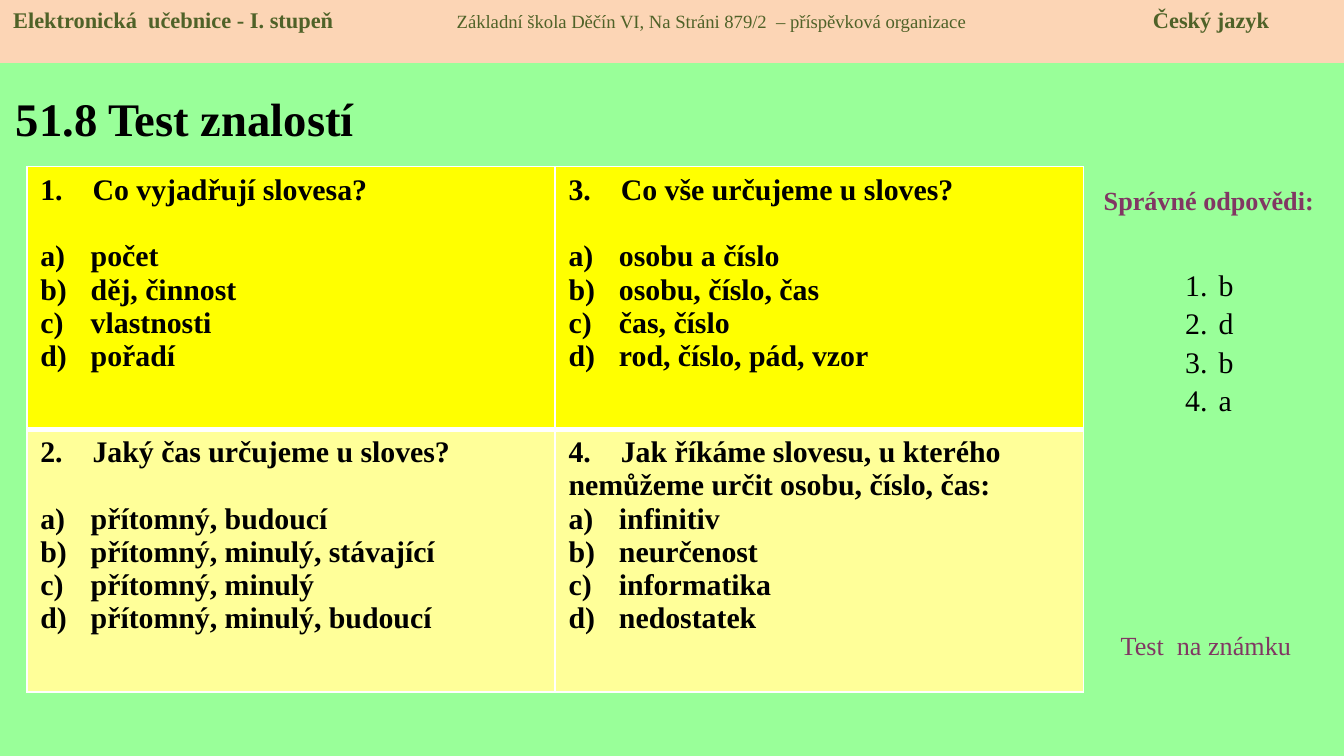
from lxml.etree import SubElement as Sub
from pptx import Presentation
from pptx.dml.color import RGBColor as RGB
from pptx.enum.shapes import MSO_SHAPE as Shape
from pptx.enum.text import MSO_ANCHOR as Anchor, PP_ALIGN as Align
from pptx.oxml import parse_xml as to_xml
from pptx.oxml.ns import nsdecls, qn
from pptx.util import Pt

HEX = {
    "back": "99FF99", "band": "FCD5B5", "olive": "4F6228", "plum": "813763",
    "ink": "000000", "line": "FFFFFF", "top": "FFFF00", "low": "FFFF99",
}
FACE = "Times New Roman"

HEAD = [
    ("Elektronická  učebnice - I. stupeň", 12, True),
    ("\tZákladní škola Děčín VI, Na Stráni 879/2  – příspěvková organizace", 10, False),
    ("\tČeský jazyk", 12, True),
]
HEAD_TABS = [237.6, 610.6]

LABELS = [
    ("51.8 Test znalostí", (1.4, 39.6, 229.7, 46.8), 25, True, "ink",
     {"vertical_anchor": Anchor.MIDDLE}, {}),
    ("Správné odpovědi:", (579.6, 95, 136.1, 24.5), 14, True, "plum",
     {}, {"alignment": Align.CENTER}),
    ("Test  na známku", (593.3, 333.4, 113, 24.5), 14, False, "plum", {}, {}),
]

TESTS = [
    [("1.\tCo vyjadřují slovesa?", 18,
      ["počet", "děj, činnost", "vlastnosti", "pořadí"]),
     ("3.\tCo vše určujeme u sloves?", 18,
      ["osobu a číslo", "osobu, číslo, čas", "čas, číslo", "rod, číslo, pád, vzor"])],
    [("2.\tJaký čas určujeme u sloves?", 18,
      ["přítomný, budoucí", "přítomný, minulý, stávající", "přítomný, minulý",
       "přítomný, minulý, budoucí"]),
     ("4.\tJak říkáme slovesu, u kterého nemůžeme určit osobu, číslo, čas:", 0,
      ["infinitiv", "neurčenost", "informatika", "nedostatek"])],
]
GRID = (14.4, 89.3, 566, 281.4)
FILLS = ["top", "low"]
EDGES = [{"L": 1, "R": 1, "T": 1, "B": 3}, {"L": 1, "R": 1, "T": 3, "B": 1}]
KEYS = ["b", "d", "b", "a"]
KEY_BOX = (627.8, 118.8, 39.6, 143.3)


def color(name):
    return RGB.from_string(HEX[name])


def apply(item, form):
    for key, val in form.items():
        setattr(item, key, val)


def write(para, text, size, bold=False, tint="ink"):
    run = para.add_run()
    run.text = text
    apply(run.font, {"name": FACE, "size": Pt(size), "bold": bold})
    run.font.color.rgb = color(tint)


def set_tabs(para, stops):
    tabs = Sub(para._p.get_or_add_pPr(), qn("a:tabLst"))
    for stop in stops:
        Sub(tabs, qn("a:tab"), pos=str(Pt(stop)), algn="l")


def number(para, kind, hang):
    props = para._p.get_or_add_pPr()
    apply(para, {"level": 0})
    props.set("marL", str(Pt(hang)))
    props.set("indent", str(-Pt(hang)))
    Sub(props, qn("a:buFont"), typeface=FACE)
    Sub(props, qn("a:buAutoNum"), type=kind)


def edge(cell, sides):
    props = cell._tc.get_or_add_tcPr()
    for spot, (side, width) in enumerate(sides.items()):
        props.insert(spot, to_xml(
            f'<a:ln{side} {nsdecls("a")} w="{Pt(width)}"><a:solidFill>'
            f'<a:srgbClr val="{HEX["line"]}"/></a:solidFill></a:ln{side}>'))


def text_box(slide, box, form):
    frame = slide.shapes.add_textbox(*map(Pt, box)).text_frame
    apply(frame, {"word_wrap": True, **form})
    return frame


def fill_cell(cell, test):
    ask, gap, picks = test
    frame = cell.text_frame
    para = frame.paragraphs[0]
    para.space_after = Pt(gap)
    set_tabs(para, [28])
    write(para, ask, 16, True)
    for pick in picks:
        para = frame.add_paragraph()
        number(para, "alphaLcParenR", 27)
        write(para, pick, 16, True)


def add_test(slide):
    table = slide.shapes.add_table(2, 2, *map(Pt, GRID)).table
    apply(table, {"first_row": False, "horz_banding": False})
    for r, row in enumerate(TESTS):
        table.rows[r].height = Pt(GRID[3] / 2)
        for c, test in enumerate(row):
            table.columns[c].width = Pt(GRID[2] / 2)
            cell = table.cell(r, c)
            cell.fill.solid()
            cell.fill.fore_color.rgb = color(FILLS[r])
            edge(cell, EDGES[r])
            fill_cell(cell, test)


def add_keys(slide):
    frame = text_box(slide, KEY_BOX, {"margin_top": Pt(24)})
    for i, key in enumerate(KEYS):
        para = frame.add_paragraph() if i else frame.paragraphs[0]
        para.space_after = Pt(1.4)
        number(para, "arabicPeriod", 18)
        write(para, key, 16)


def add_head(slide):
    band = slide.shapes.add_shape(Shape.RECTANGLE, *map(Pt, (0, 0, 720, 33.8)))
    band.shadow.inherit = False
    band.fill.solid()
    band.fill.fore_color.rgb = color("band")
    band.line.fill.background()
    apply(band.text_frame, {"word_wrap": True, "vertical_anchor": Anchor.TOP})
    para = band.text_frame.paragraphs[0]
    para.alignment = Align.LEFT
    set_tabs(para, HEAD_TABS)
    for text, size, bold in HEAD:
        write(para, text, size, bold, "olive")


def main():
    deck = Presentation()
    apply(deck, {"slide_width": Pt(720), "slide_height": Pt(405)})
    slide = deck.slides.add_slide(deck.slide_layouts[6])
    slide.background.fill.solid()
    slide.background.fill.fore_color.rgb = color("back")
    for text, box, size, bold, tint, form, style in LABELS:
        para = text_box(slide, box, form).paragraphs[0]
        apply(para, style)
        write(para, text, size, bold, tint)
    add_test(slide)
    add_keys(slide)
    add_head(slide)
    deck.save("out.pptx")


if __name__ == "__main__":
    main()
